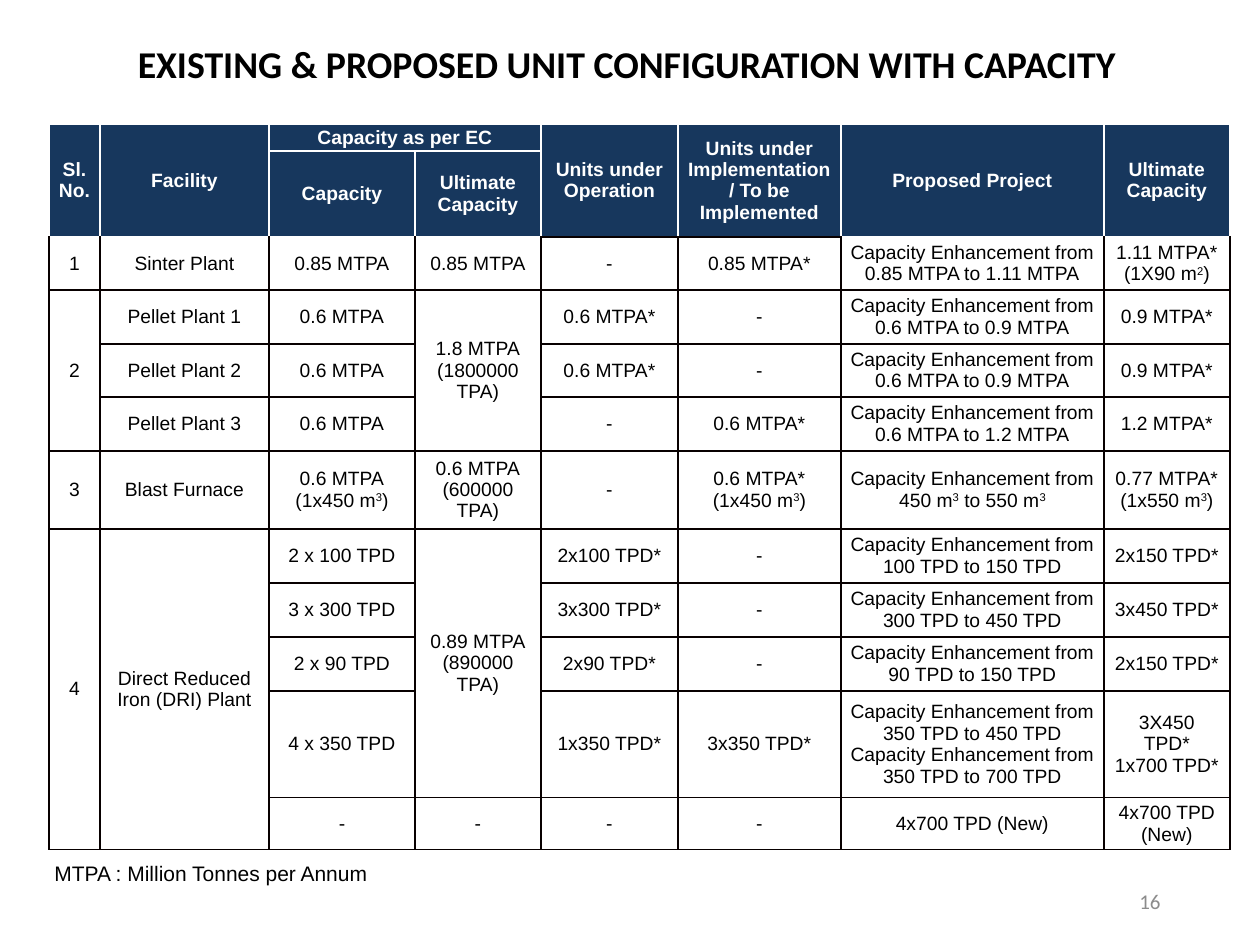
from lxml.etree import SubElement
from pptx import Presentation
from pptx.dml.color import RGBColor
from pptx.enum.text import MSO_ANCHOR, MSO_AUTO_SIZE, PP_ALIGN
from pptx.oxml.ns import qn
from pptx.util import Pt

NAVY = RGBColor(0x17, 0x37, 0x5D)
WHITE = RGBColor(0xFF, 0xFF, 0xFF)
BLACK = RGBColor(0, 0, 0)
INK = RGBColor(0x08, 0, 0)
GRAY = RGBColor(0x8C, 0x8C, 0x8C)

TITLE = "EXISTING & PROPOSED UNIT CONFIGURATION WITH CAPACITY"
FOOTNOTE = "MTPA : Million Tonnes per Annum"
PAGE_NUMBER = "16"
RAISE = "Capacity Enhancement from "

# Text between carets is superscript; None is covered by a merged cell.
UNITS = [
    ["Sl. No.", "Facility", "Capacity as per EC", None, "Units under Operation",
     "Units under Implementation / To be Implemented", "Proposed Project", "Ultimate Capacity"],
    [None, None, "Capacity", "Ultimate Capacity", None, None, None, None],
    ["1", "Sinter Plant", "0.85 MTPA", "0.85 MTPA", "-", "0.85 MTPA*",
     RAISE + "0.85 MTPA to 1.11 MTPA", "1.11 MTPA*\n(1X90 m^2^)"],
    ["2", "Pellet Plant 1", "0.6 MTPA", "1.8 MTPA\n(1800000 TPA)", "0.6 MTPA*", "-",
     RAISE + "0.6 MTPA to 0.9 MTPA", "0.9 MTPA*"],
    [None, "Pellet Plant 2", "0.6 MTPA", None, "0.6 MTPA*", "-",
     RAISE + "0.6 MTPA to 0.9 MTPA", "0.9 MTPA*"],
    [None, "Pellet Plant 3", "0.6 MTPA", None, "-", "0.6 MTPA*",
     RAISE + "0.6 MTPA to 1.2 MTPA", "1.2 MTPA*"],
    ["3", "Blast Furnace", "0.6 MTPA\n(1x450 m^3^)", "0.6 MTPA\n(600000 TPA)", "-",
     "0.6 MTPA*\n(1x450 m^3^)", RAISE + "450 m^3^ to 550 m^3^", "0.77 MTPA*\n(1x550 m^3^)"],
    ["4", "Direct Reduced Iron (DRI) Plant", "2 x 100 TPD", "0.89 MTPA\n(890000 TPA)",
     "2x100 TPD*", "-", RAISE + "100 TPD to 150 TPD", "2x150 TPD*"],
    [None, None, "3 x 300 TPD", None, "3x300 TPD*", "-", RAISE + "300 TPD to 450 TPD", "3x450 TPD*"],
    [None, None, "2 x 90 TPD", None, "2x90 TPD*", "-", RAISE + "90 TPD to 150 TPD", "2x150 TPD*"],
    [None, None, "4 x 350 TPD", None, "1x350 TPD*", "3x350 TPD*",
     RAISE + "350 TPD to 450 TPD " + RAISE + "350 TPD to 700 TPD", "3X450\nTPD*\n1x700 TPD*"],
    [None, None, "-", "-", "-", "-", "4x700 TPD (New)", "4x700 TPD (New)"],
]
MERGES = [((0, col), (1, col)) for col in (0, 1, 4, 5, 6, 7)] + [
    ((0, 2), (0, 3)), ((3, 0), (5, 0)), ((3, 3), (5, 3)),
    ((7, 0), (11, 0)), ((7, 1), (11, 1)), ((7, 3), (10, 3))]
HEADER_ROWS = 2
INK_HEADER_COLUMNS = (4, 5)
COLUMN_WIDTHS = [51, 169, 146, 126, 137, 163, 263, 126]
ROW_HEIGHTS = [27, 86, 53, 54, 53, 54, 78, 54, 54, 54, 107, 52]


def px(length):
    return round(length * 914400 / 126)


def write(frame, text, *, size, color=BLACK, font="Arial", bold=False,
          align=PP_ALIGN.LEFT, spacing=None):
    frame.word_wrap = True
    for index, line in enumerate(text.split("\n")):
        paragraph = frame.add_paragraph() if index else frame.paragraphs[0]
        paragraph.alignment = align
        paragraph.line_spacing = spacing
        for part, words in enumerate(line.split("^")):
            if not words:
                continue
            run = paragraph.add_run()
            run.text = words
            run.font.size, run.font.name, run.font.bold = Pt(size), font, bold
            run.font.color.rgb = color
            if part % 2:
                run._r.get_or_add_rPr().set("baseline", "30000")


def draw_borders(cell, colors):
    properties = cell._tc.get_or_add_tcPr()
    for index, (side, color) in enumerate(colors.items()):
        line = properties.makeelement(qn(f"a:ln{side}"), {"w": str(Pt(1))})
        fill = SubElement(line, qn("a:solidFill"))
        SubElement(fill, qn("a:srgbClr"), val=str(color))
        properties.insert(index, line)


def border_colors(row, col):
    edge = INK if col in INK_HEADER_COLUMNS else WHITE
    main = WHITE if row < HEADER_ROWS else INK
    return {"L": main, "R": main,
            "T": edge if row == HEADER_ROWS else main,
            "B": edge if row == HEADER_ROWS - 1 else main}


def add_units_table(slide):
    table = slide.shapes.add_table(
        len(UNITS), len(COLUMN_WIDTHS), px(49), px(124),
        px(sum(COLUMN_WIDTHS)), px(sum(ROW_HEIGHTS))).table
    table.first_row = table.horz_banding = False
    for column, width in zip(table.columns, COLUMN_WIDTHS):
        column.width = px(width)
    for row, height in zip(table.rows, ROW_HEIGHTS):
        row.height = px(height)
    for start, end in MERGES:
        table.cell(*start).merge(table.cell(*end))
    for r, entries in enumerate(UNITS):
        header = r < HEADER_ROWS
        for c, entry in enumerate(entries):
            cell = table.cell(r, c)
            cell.margin_left = cell.margin_right = px(9)
            cell.margin_top = cell.margin_bottom = 0
            cell.vertical_anchor = MSO_ANCHOR.MIDDLE
            if header:
                cell.fill.solid()
                cell.fill.fore_color.rgb = NAVY
            else:
                cell.fill.background()
            draw_borders(cell, border_colors(r, c))
            write(cell.text_frame, entry or "", size=11, bold=header,
                  color=WHITE if header else BLACK, align=PP_ALIGN.CENTER)


def main():
    deck = Presentation()
    deck.slide_width, deck.slide_height = px(1260), px(945)
    slide = deck.slides.add_slide(deck.slide_layouts[5])

    title = slide.shapes.title
    title.left, title.top, title.width, title.height = px(0), px(47), px(1254), px(39)
    title.text_frame.vertical_anchor = MSO_ANCHOR.MIDDLE
    title.text_frame.auto_size = MSO_AUTO_SIZE.NONE
    write(title.text_frame, TITLE, size=21.6, font="Calibri", bold=True,
          align=PP_ALIGN.CENTER, spacing=0.9)

    add_units_table(slide)

    footnote = slide.shapes.add_textbox(px(42), px(854), px(479), px(38)).text_frame
    footnote.auto_size = MSO_AUTO_SIZE.SHAPE_TO_FIT_TEXT
    write(footnote, FOOTNOTE, size=12)

    page_number = slide.shapes.add_textbox(px(890), px(876), px(283), px(50)).text_frame
    page_number.vertical_anchor = MSO_ANCHOR.MIDDLE
    write(page_number, PAGE_NUMBER, size=12, font="Calibri", color=GRAY, align=PP_ALIGN.RIGHT)

    deck.save("out.pptx")


if __name__ == "__main__":
    main()
